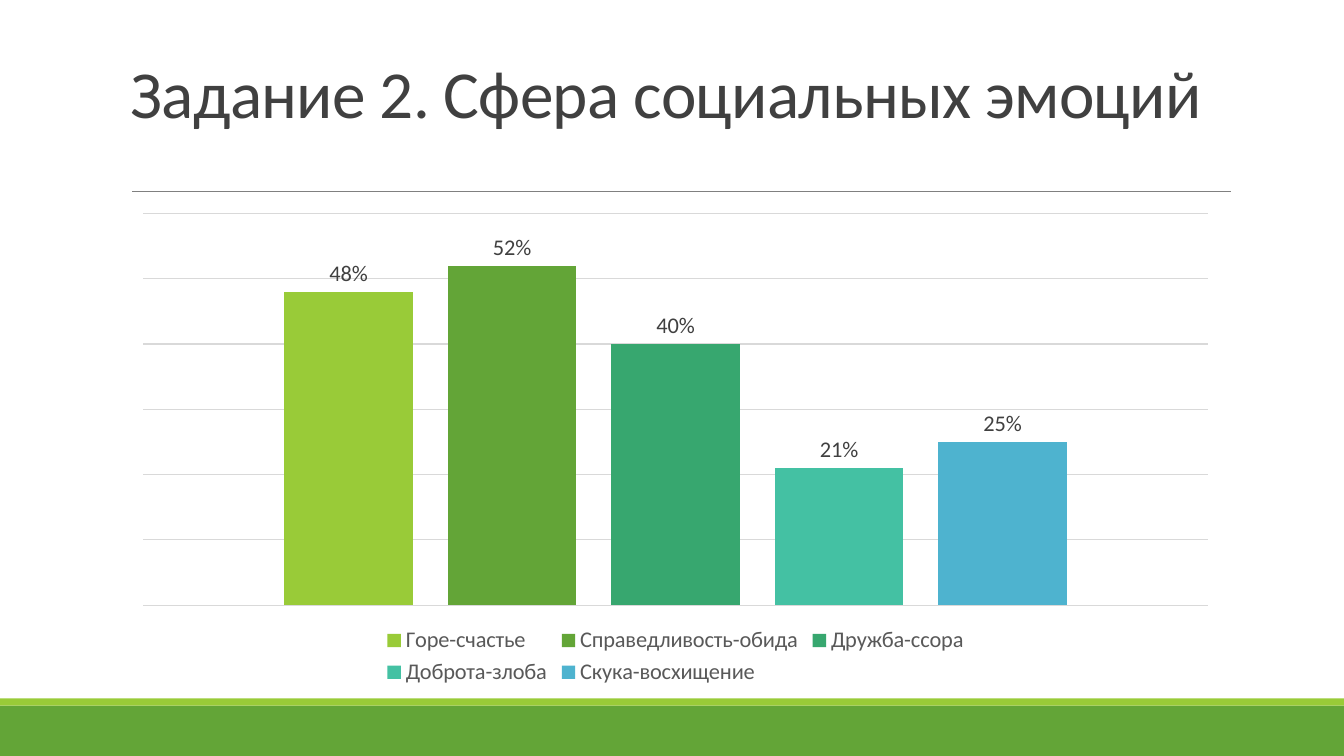
import pptx
import pptx.util
import pptx.dml.color
import pptx.chart.data
import pptx.enum.chart
import pptx.enum.shapes
import pptx.enum.text
import pptx.oxml

Inches = pptx.util.Inches
Pt = pptx.util.Pt
RGBColor = pptx.dml.color.RGBColor

GREEN = RGBColor(0x63, 0xA5, 0x37)
LIME = RGBColor(0x99, 0xCB, 0x38)
JADE = RGBColor(0x37, 0xA7, 0x6F)
TEAL = RGBColor(0x44, 0xC1, 0xA3)
BLUE = RGBColor(0x4E, 0xB3, 0xCF)
RULE = RGBColor(0x80, 0x80, 0x80)
GRID = RGBColor(0xD9, 0xD9, 0xD9)
DARK = RGBColor(0x40, 0x40, 0x40)
GRAY = RGBColor(0x59, 0x59, 0x59)
BLACK = RGBColor(0, 0, 0)

SCORES = [
    ("Горе-счастье", 0.48, LIME),
    ("Справедливость-обида", 0.52, GREEN),
    ("Дружба-ссора", 0.40, JADE),
    ("Доброта-злоба", 0.21, TEAL),
    ("Скука-восхищение", 0.25, BLUE),
]


def set_font(font, size, color, face="Calibri"):
    font.name = face
    font.size = Pt(size)
    font.color.rgb = color


def write(frame, text, size=16, color=DARK, lead=1.0, track=0):
    para = frame.paragraphs[0]
    para.line_spacing = lead
    run = para.add_run()
    run.text = text
    set_font(run.font, size, color)
    run._r.get_or_add_rPr().set("spc", str(int(track * 100)))


class Painter:
    def __init__(self, slide, size=16):
        self.slide = slide
        self.shapes = slide.shapes
        self.size = size

    def band(self, top, height, color):
        bar = self.shapes.add_shape(
            pptx.enum.shapes.MSO_SHAPE.RECTANGLE,
            0, Inches(top), Inches(13.33), Inches(height))
        bar.shadow.inherit = False
        bar.fill.solid()
        bar.fill.fore_color.rgb = color
        bar.line.fill.background()

    def rule(self, left, right, top):
        line = self.shapes.add_connector(
            pptx.enum.shapes.MSO_CONNECTOR.STRAIGHT,
            Inches(left), Inches(top), Inches(right), Inches(top))
        line.line.color.rgb = RULE
        line.line.width = Pt(0.5)
        line._element.spPr.append(pptx.oxml.parse_xml(
            '<a:effectLst xmlns:a='
            '"http://schemas.openxmlformats.org/drawingml/2006/main"/>'))

    def title(self, text, left, top, width, height):
        box = self.shapes.add_textbox(
            Inches(left), Inches(top), Inches(width), Inches(height))
        frame = box.text_frame
        frame.word_wrap = True
        frame.vertical_anchor = pptx.enum.text.MSO_ANCHOR.BOTTOM
        write(frame, text, size=48, lead=0.85, track=-0.5)

    def chart(self, scores, left, top, width, height):
        data = pptx.chart.data.CategoryChartData(number_format="0%")
        data.categories = ["1"]
        for name, value, _ in scores:
            data.add_series(name, [value])
        chart = self.shapes.add_chart(
            pptx.enum.chart.XL_CHART_TYPE.COLUMN_CLUSTERED,
            Inches(left), Inches(top), Inches(width), Inches(height),
            data).chart
        set_font(chart.font, self.size, BLACK)
        chart.has_title = False
        chart.has_legend = True
        chart.legend.position = pptx.enum.chart.XL_LEGEND_POSITION.BOTTOM
        chart.legend.include_in_layout = False
        set_font(chart.legend.font, self.size, GRAY)

        chart.category_axis.visible = False
        axis = chart.value_axis
        axis.visible = False
        axis.minimum_scale = 0
        axis.maximum_scale = 0.6
        axis.major_unit = 0.1
        axis.tick_labels.number_format = "0%"
        axis.tick_labels.number_format_is_linked = False
        axis.has_major_gridlines = True
        grid = axis.major_gridlines.format.line
        grid.color.rgb = GRID
        grid.width = Pt(0.75)

        plot = chart.plots[0]
        plot.vary_by_categories = False
        plot.gap_width = 219
        plot.overlap = -27
        for series, (_, _, color) in zip(plot.series, scores):
            series.format.fill.solid()
            series.format.fill.fore_color.rgb = color
            labels = series.data_labels
            labels.show_value = True
            labels.number_format = "0%"
            labels.number_format_is_linked = False
            labels.position = pptx.enum.chart.XL_LABEL_POSITION.OUTSIDE_END
            set_font(labels.font, self.size, DARK)


def main():
    deck = pptx.Presentation()
    deck.slide_width = Inches(13.33)
    deck.slide_height = Inches(7.5)
    page = Painter(deck.slides.add_slide(deck.slide_layouts[6]))
    page.band(7, 0.5, GREEN)
    page.band(6.93, 0.07, LIME)
    page.rule(1.31, 12.21, 1.9)
    page.title("Задание 2. Сфера социальных эмоций", 1.2, 0.31, 11, 1.05)
    page.chart(SCORES, 1.2, 2.02, 11, 4.83)
    deck.save("out.pptx")


if __name__ == "__main__":
    main()
